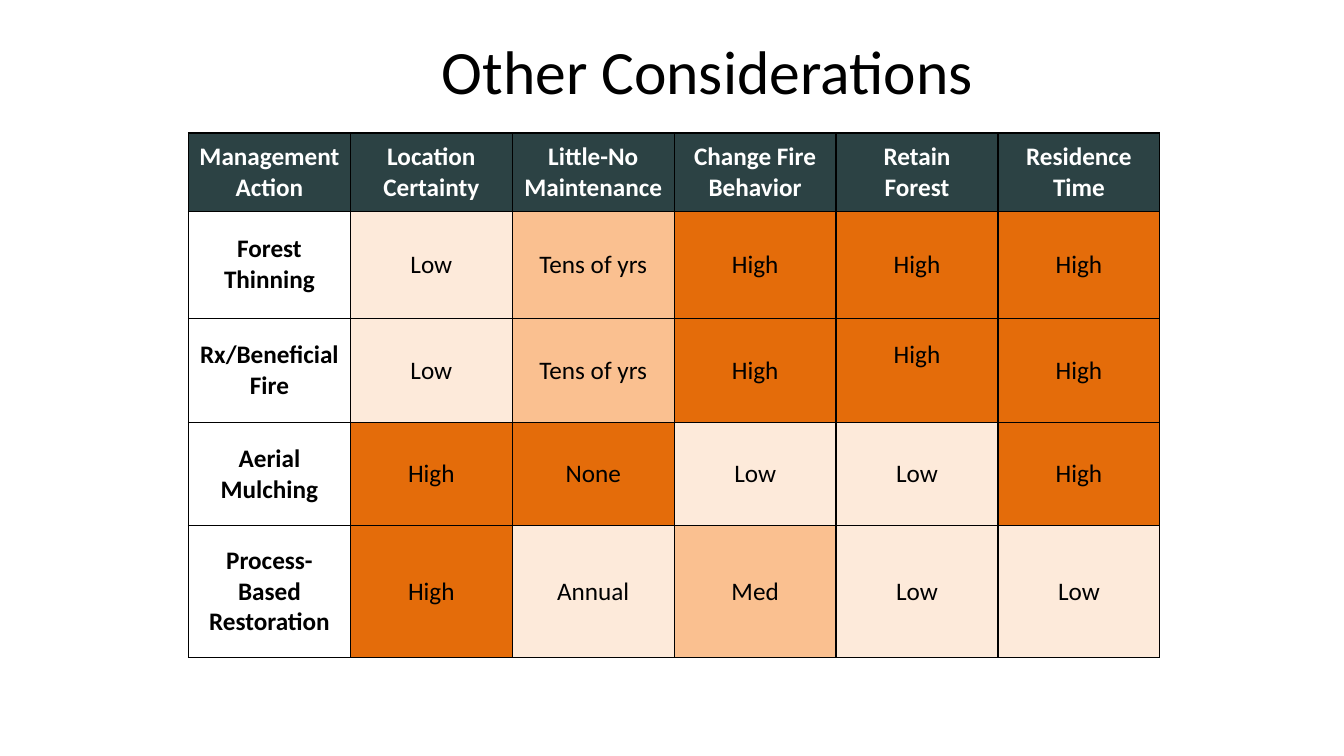
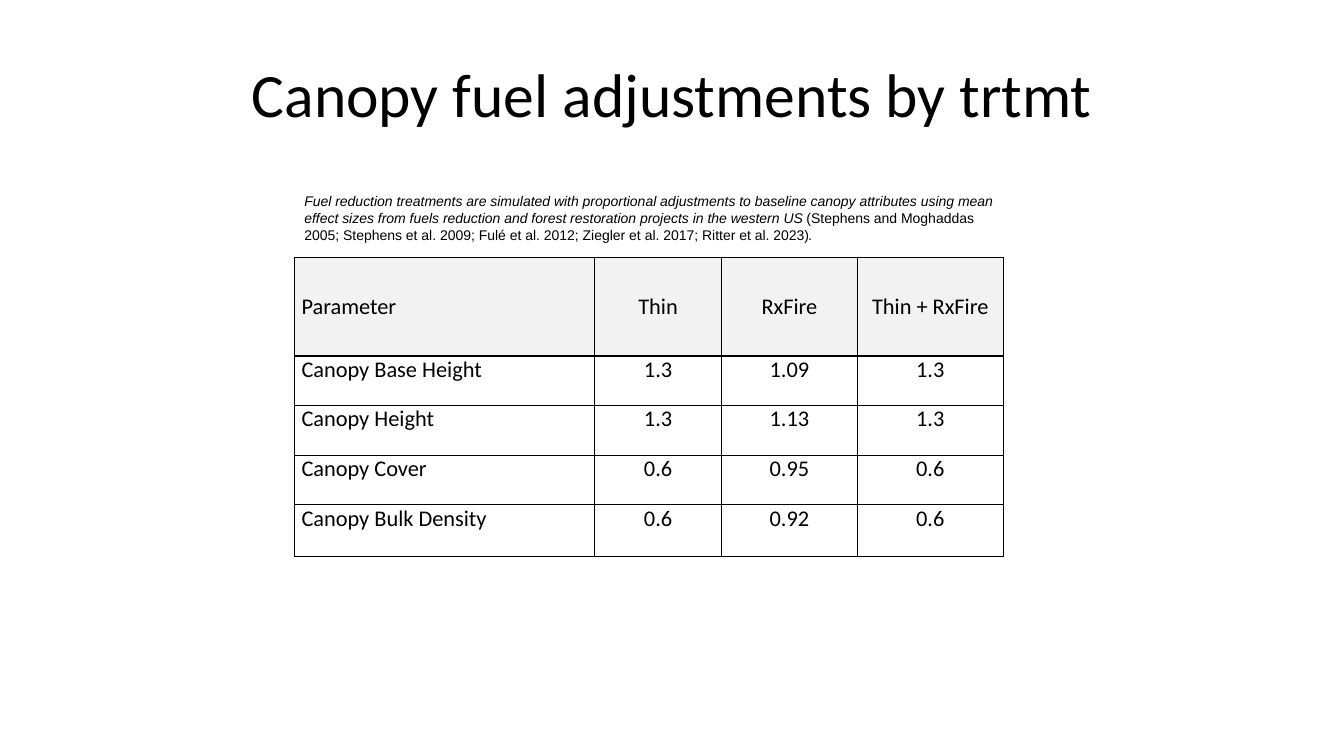
from dataclasses import dataclass

from lxml import etree
from pptx import Presentation
from pptx import util as u
from pptx.dml.color import RGBColor
from pptx.enum import text
from pptx.oxml.ns import qn

BLACK, WHITE = "000000", "FFFFFF"
DARK, GREY = "2C4244", "F2F2F2"
STRONG, MID, PALE = "E46C0A", "FAC090", "FDEADA"
SHADES = {
    "High": STRONG, "None": STRONG,
    "Med": MID, "Tens of yrs": MID,
    "Low": PALE, "Annual": PALE,
}
FONT = "Calibri"
LEFT, MIDDLE = text.PP_ALIGN.LEFT, text.PP_ALIGN.CENTER


@dataclass
class Look:
    """How one table cell is drawn; insets are in cm."""
    size: int
    fill: str = WHITE
    ink: str = BLACK
    bold: bool = False
    align: text.PP_ALIGN = MIDDLE
    anchor: text.MSO_ANCHOR = text.MSO_ANCHOR.MIDDLE
    side: float = 0.25
    top: float = 0.13
    foot: float = 0.13


@dataclass
class Grid:
    """Place and contents of a table, in cm."""
    left: float
    top: float
    cols: list[float]
    rows: list[float]
    cells: list[list[str]]


# Shared helpers
def tint(code: str) -> RGBColor:
    return RGBColor.from_string(code)


def style(font, size: int, ink: str = BLACK, bold: bool = False,
          name: str = FONT) -> None:
    font.name, font.size, font.bold = name, u.Pt(size), bold
    font.color.rgb = tint(ink)


def edge(cell, width: float = 1) -> None:
    """Black line on all four sides of a cell."""
    props = cell._tc.get_or_add_tcPr()
    for side in ("lnL", "lnR", "lnT", "lnB"):
        line = etree.SubElement(props, qn("a:" + side), w=str(u.Pt(width)))
        fill = etree.SubElement(line, qn("a:solidFill"))
        etree.SubElement(fill, qn("a:srgbClr"), val=BLACK)


def paint(cell, words: str, look: Look) -> None:
    edge(cell)
    cell.fill.solid()
    cell.fill.fore_color.rgb = tint(look.fill)
    cell.vertical_anchor = look.anchor
    cell.margin_left = cell.margin_right = u.Cm(look.side)
    cell.margin_top, cell.margin_bottom = u.Cm(look.top), u.Cm(look.foot)
    cell.text_frame.text = words
    for para in cell.text_frame.paragraphs:
        para.alignment = look.align
        for run in para.runs:
            style(run.font, look.size, look.ink, look.bold)


def draw_grid(slide, grid: Grid, pick) -> None:
    """Add a table; pick(row, col, words) gives each cell's look."""
    frame = slide.shapes.add_table(
        len(grid.rows), len(grid.cols), u.Cm(grid.left), u.Cm(grid.top),
        u.Cm(sum(grid.cols)), u.Cm(sum(grid.rows)))
    table = frame.table
    table.horz_banding = False
    for col, width in zip(table.columns, grid.cols):
        col.width = u.Cm(width)
    for row, height in zip(table.rows, grid.rows):
        row.height = u.Cm(height)
    for r, line in enumerate(grid.cells):
        for c, words in enumerate(line):
            paint(table.cell(r, c), words, pick(r, c, words))


def add_slide(deck, title: str, left: float, top: float):
    slide = deck.slides.add_slide(deck.slide_layouts[5])
    head = slide.shapes.title
    head.left, head.top = u.Cm(left), u.Cm(top)
    head.width, head.height = u.Cm(30.48), u.Cm(3.18)
    frame = head.text_frame
    frame.text = title
    frame.vertical_anchor = text.MSO_ANCHOR.MIDDLE
    para = frame.paragraphs[0]
    para.alignment = MIDDLE
    style(para.runs[0].font, 44)
    return slide


# Slide 1: ratings of each action
ACTIONS = Grid(
    4.75, 3.35, [4.08] * 6, [1.97, 2.7, 2.63, 2.6, 3.31],
    [
        ["Management Action", "Location Certainty", "Little-No Maintenance",
         "Change Fire Behavior", "Retain\nForest", "Residence Time"],
        ["Forest Thinning", "Low", "Tens of yrs", "High", "High", "High"],
        ["Rx/Beneficial Fire", "Low", "Tens of yrs", "High", "High", "High"],
        ["Aerial Mulching", "High", "None", "Low", "Low", "High"],
        ["Process-Based Restoration", "High", "Annual", "Med", "Low", "Low"],
    ])


def rate(row: int, col: int, words: str) -> Look:
    if row == 0:
        return Look(18, DARK, WHITE, True)
    if col == 0:
        return Look(18, bold=True)
    look = Look(18, SHADES[words])
    if (row, col) == (2, 4):  # this rating sits one half line higher
        look.foot = 0.92
    return look


# Slide 2: canopy factors
FACTORS = Grid(
    7.42, 6.48, [7.57, 3.19, 3.43, 3.67], [2.49, 1.25, 1.25, 1.25, 1.3],
    [
        ["Parameter", "Thin", "RxFire", "Thin + RxFire"],
        ["Canopy Base Height", "1.3", "1.09", "1.3"],
        ["Canopy Height", "1.3", "1.13", "1.3"],
        ["Canopy Cover", "0.6", "0.95", "0.6"],
        ["Canopy Bulk Density", "0.6", "0.92", "0.6"],
    ])
# Caption runs: words, italic
CAPTION = [
    ("Fuel reduction treatments are simulated with proportional adjustments "
     "to baseline canopy attributes using mean effect sizes from fuels "
     "reduction and forest restoration projects in the western US ", True),
    ("(Stephens and Moghaddas 2005; Stephens et al. 2009; Fulé et al. 2012; "
     "Ziegler et al. 2017; Ritter et al. 2023)", False),
    (".", True),
]


def factor(row: int, col: int, words: str) -> Look:
    look = Look(16, side=0.18, top=0, foot=0)
    if col == 0:
        look.align = LEFT
    if row == 0:
        look.fill = GREY
    else:
        look.anchor = text.MSO_ANCHOR.TOP
    return look


def add_note(slide) -> None:
    box = slide.shapes.add_textbox(u.Cm(7.42), u.Cm(4.72),
                                   u.Cm(17.86), u.Cm(1.54))
    frame = box.text_frame
    frame.word_wrap = True
    frame.auto_size = text.MSO_AUTO_SIZE.SHAPE_TO_FIT_TEXT
    frame.vertical_anchor = text.MSO_ANCHOR.MIDDLE
    for words, slant in CAPTION:
        run = frame.paragraphs[0].add_run()
        run.text = words
        style(run.font, 10, name="Arial")
        run.font.italic = slant


def main() -> None:
    deck = Presentation()
    deck.slide_width, deck.slide_height = u.Cm(33.87), u.Cm(19.05)

    slide = add_slide(deck, "Other Considerations", 2.59, 0.18)
    draw_grid(slide, ACTIONS, rate)

    slide = add_slide(deck, "Canopy fuel adjustments by trtmt", 1.7, 0.76)
    draw_grid(slide, FACTORS, factor)
    add_note(slide)

    deck.save("out.pptx")


if __name__ == "__main__":
    main()
